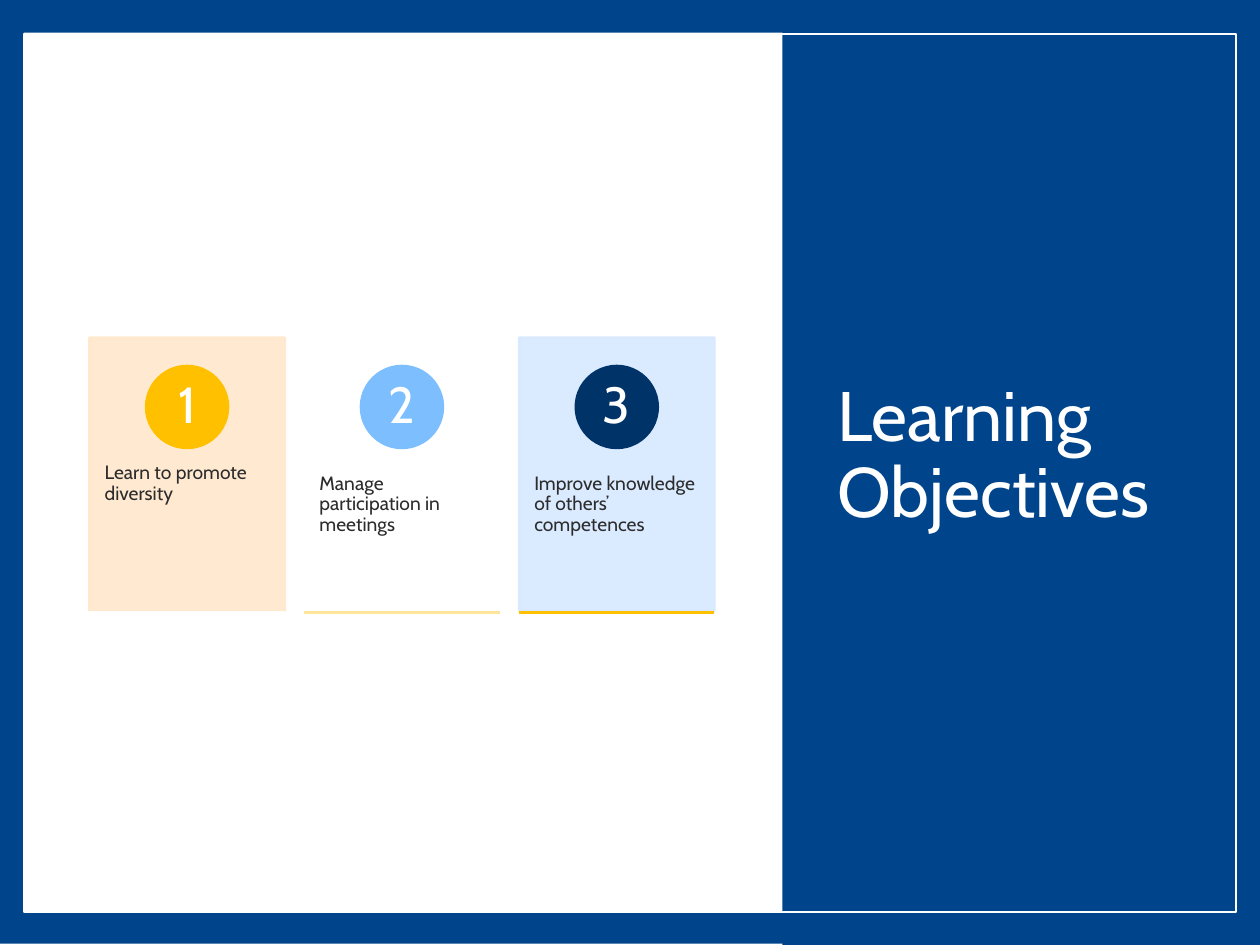
from lxml.etree import SubElement
from pptx import Presentation
from pptx.dml.color import RGBColor
from pptx.enum.shapes import MSO_CONNECTOR, MSO_SHAPE
from pptx.enum.text import MSO_ANCHOR, PP_ALIGN
from pptx.oxml.ns import qn
from pptx.util import Inches, Pt

WIDTH, HEIGHT = 10, 7.5
FONT = "Cabin"
COLORS = {
    "blue": "00458B", "white": "FFFFFF", "text": "2C2C2C",
    "peach": "FFE8CC", "pale_blue": "D7E8FF", "gold": "FFC000",
    "sky": "7DBEFF", "navy": "003368", "pale_gold": "FEE599",
}
# Objective, card colour, circle colour, underline colour
OBJECTIVES = [
    ("Learn to promote diversity", "peach", "gold", "white"),
    ("Manage participation in meetings", "white", "sky", "pale_gold"),
    ("Improve knowledge of others’ competences", "pale_blue", "navy", "gold"),
]
CARD_LEFT, CARD_TOP, CARD_WIDTH, CARD_HEIGHT = 0.71, 2.68, 1.55, 2.17
CARD_GAP = 0.155
CIRCLE_SIZE, NUMBER_SIZE = 0.65, 0.46


def rgb(name):
    return RGBColor.from_string(COLORS[name])


def set_alpha(color_format_owner, percent):
    """Make every solid colour below the given XML element translucent."""
    for color in color_format_owner.iter(qn("a:srgbClr")):
        SubElement(color, qn("a:alpha"), val=str(percent * 1000))


def add_panel(slide, box, fill=None, line=None, line_width=1.5,
              kind=MSO_SHAPE.RECTANGLE, alpha=None):
    shape = slide.shapes.add_shape(kind, *map(Inches, box))
    shape.shadow.inherit = False
    if fill:
        shape.fill.solid()
        shape.fill.fore_color.rgb = rgb(fill)
    else:
        shape.fill.background()
    if line:
        shape.line.color.rgb = rgb(line)
        shape.line.width = Pt(line_width)
    else:
        shape.line.fill.background()
    if alpha:
        set_alpha(shape.element.spPr, alpha)


def add_text(slide, box, text, size, color="white", align=PP_ALIGN.LEFT,
             anchor=MSO_ANCHOR.MIDDLE, inset=(0.1, 0.05)):
    frame = slide.shapes.add_textbox(*map(Inches, box)).text_frame
    frame.word_wrap = True
    frame.vertical_anchor = anchor
    frame.margin_left = frame.margin_right = Inches(inset[0])
    frame.margin_top = frame.margin_bottom = Inches(inset[1])
    paragraph = frame.paragraphs[0]
    paragraph.alignment = align
    paragraph.line_spacing = 0.9
    run = paragraph.add_run()
    run.text = text
    run.font.name = FONT
    run.font.size = Pt(size)
    run.font.color.rgb = rgb(color)


def add_underline(slide, left, top, width, color):
    line = slide.shapes.add_connector(
        MSO_CONNECTOR.STRAIGHT, Inches(left), Inches(top),
        Inches(left + width), Inches(top))
    line.line.color.rgb = rgb(color)
    line.line.width = Pt(1.5)
    SubElement(line.element.spPr, qn("a:effectLst"))


def centred_square(left, middle, size):
    """Box of a square centred across the card that starts at left."""
    return left + (CARD_WIDTH - size) / 2, middle - size / 2, size, size


def add_objective(slide, index, text, card, circle, underline):
    left = CARD_LEFT + index * (CARD_WIDTH + CARD_GAP)
    middle = CARD_TOP + 0.55
    add_panel(slide, (left, CARD_TOP, CARD_WIDTH, CARD_HEIGHT),
              card, card, alpha=90)
    add_text(slide, (left, CARD_TOP + 0.83, CARD_WIDTH, 1.3), text, 11,
             color="text", anchor=MSO_ANCHOR.TOP, inset=(0.12, 0.36))
    add_panel(slide, centred_square(left, middle, CIRCLE_SIZE),
              circle, circle, kind=MSO_SHAPE.OVAL)
    add_text(slide, centred_square(left, middle, NUMBER_SIZE), str(index + 1),
             29, align=PP_ALIGN.CENTER, inset=(0.05, 0.01))
    add_underline(slide, left, CARD_TOP + CARD_HEIGHT + 0.01, CARD_WIDTH,
                  underline)


def main():
    presentation = Presentation()
    presentation.slide_width = Inches(WIDTH)
    presentation.slide_height = Inches(HEIGHT)
    slide = presentation.slides.add_slide(presentation.slide_layouts[6])

    add_panel(slide, (0, -0.01, WIDTH, HEIGHT), "blue")
    add_panel(slide, (0.19, 0.26, 9.62, 6.97), "white")
    add_panel(slide, (6.21, 0, WIDTH - 6.21, HEIGHT), "blue")
    add_text(slide, (6.55, 0.67, 2.93, 5.91), "Learning Objectives", 40)
    add_panel(slide, (0.19, 0.27, 9.62, 6.97), line="white", line_width=1)
    for index, objective in enumerate(OBJECTIVES):
        add_objective(slide, index, *objective)

    presentation.save("out.pptx")


if __name__ == "__main__":
    main()
